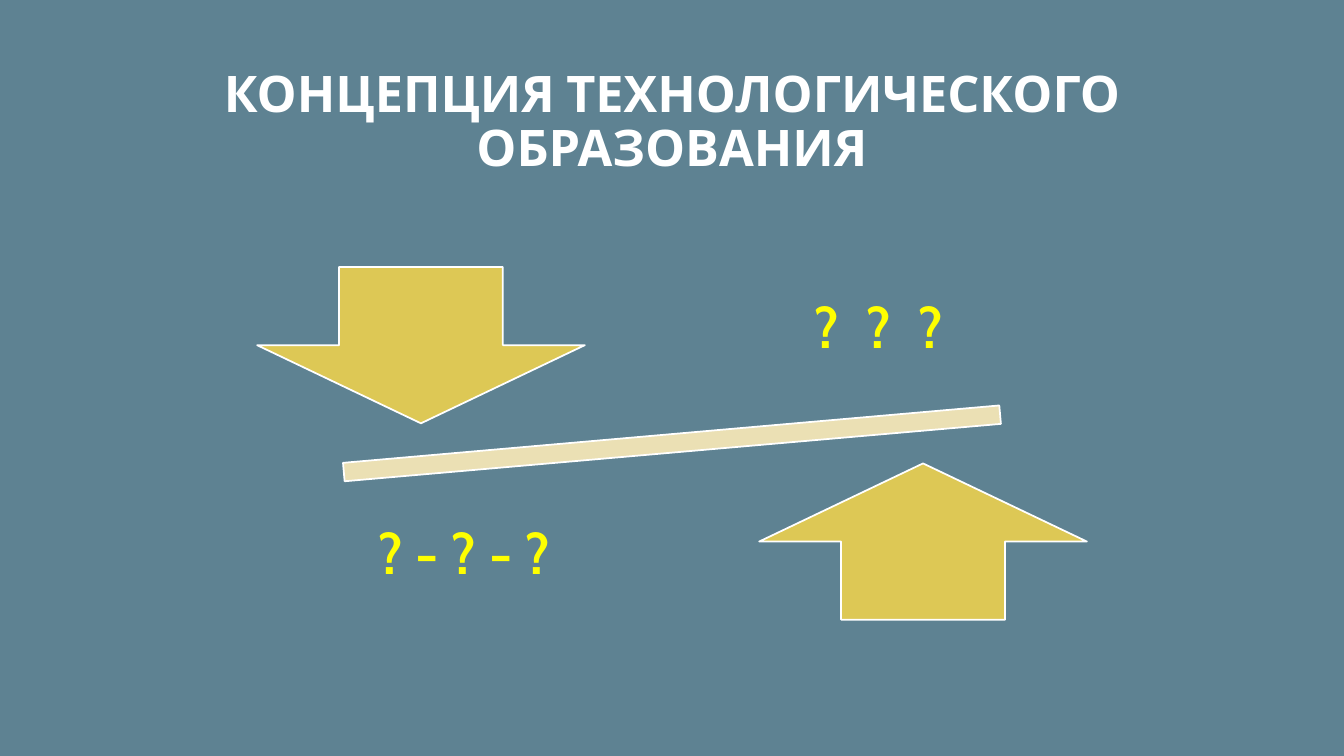
"""Builds the slide on the concept of technological education: a tilted balance with two arrows."""
from dataclasses import dataclass

from pptx import Presentation
from pptx.dml.color import RGBColor
from pptx.enum.shapes import MSO_SHAPE
from pptx.enum.text import MSO_ANCHOR, PP_ALIGN
from pptx.util import Inches, Pt

MINUS, DOWN, UP = MSO_SHAPE.MATH_MINUS, MSO_SHAPE.DOWN_ARROW, MSO_SHAPE.UP_ARROW
MIDDLE, CENTER = MSO_ANCHOR.MIDDLE, PP_ALIGN.CENTER


@dataclass(frozen=True)
class Theme:
    background: str = "5E8292"
    beam: str = "EBE0B4"
    arrow: str = "DDC855"
    light: str = "FFFFFF"
    question: str = "FFFF00"
    font: str = "Cabin"
    title_size: int = 36
    question_size: int = 40
    outline: float = 1.25


theme = Theme()
deck = Presentation()
deck.slide_width, deck.slide_height = Inches(13.33), Inches(7.5)
slide = deck.slides.add_slide(deck.slide_layouts[5])
slide.background.fill.solid()
slide.background.fill.fore_color.rgb = RGBColor.from_string(theme.background)


def area(left, top, width, height):
    """Turn percentages of the slide into lengths."""
    across, down = deck.slide_width / 100, deck.slide_height / 100
    return [int(n) for n in (left * across, top * down, width * across, height * down)]


def write(holder, words, size, color):
    """Put one centred bold paragraph into a shape."""
    frame = holder.text_frame
    frame.text = words
    frame.word_wrap = True
    frame.vertical_anchor = MIDDLE
    paragraph = frame.paragraphs[0]
    paragraph.alignment = CENTER
    paragraph.line_spacing = 0.9
    font = paragraph.runs[0].font
    font.name, font.size, font.bold = theme.font, Pt(size), True
    font.color.rgb = RGBColor.from_string(color)
    return frame


title = slide.shapes.title
title.left, title.top, title.width, title.height = area(9.38, 9.07, 81.25, 14.4)
write(title, "КОНЦЕПЦИЯ ТЕХНОЛОГИЧЕСКОГО ОБРАЗОВАНИЯ", theme.title_size, theme.light)

balance = slide.shapes.add_group_shape().shapes
center_x, center_y = 50, 58.65
beam_width, beam_height = 66.7, 10.4
arrow_width, arrow_height = 24.38, 20.67
arrow_left, arrow_top = 19.13, 35.33

parts = (
    (MINUS, center_x - beam_width / 2, center_y - beam_height / 2,
     beam_width, beam_height, theme.beam, 355),
    (DOWN, arrow_left, arrow_top, arrow_width, arrow_height, theme.arrow, 0),
    (UP, 2 * center_x - arrow_left - arrow_width, 2 * center_y - arrow_top - arrow_height,
     arrow_width, arrow_height, theme.arrow, 0),
)
for preset, left, top, width, height, color, angle in parts:
    part = balance.add_shape(preset, *area(left, top, width, height))
    part.rotation = angle
    part.shadow.inherit = False
    part.fill.solid()
    part.fill.fore_color.rgb = RGBColor.from_string(color)
    part.line.color.rgb = RGBColor.from_string(theme.light)
    part.line.width = Pt(theme.outline)

questions = (
    ("? ? ?", 51.24, 32.8, 28.36, 5.2),
    ("? - ? - ?", 20.03, 62.8, 29.03, 0),
)
for words, left, top, width, tracking in questions:
    question = balance.add_textbox(*area(left, top, width, 21.73))
    frame = write(question, words, theme.question_size, theme.question)
    frame.margin_left = frame.margin_right = Inches(0.31)
    frame.margin_top = frame.margin_bottom = Inches(0.31)
    run_properties = frame.paragraphs[0].runs[0].font._element
    run_properties.set("spc", str(round(tracking * 100)))

deck.save("out.pptx")
